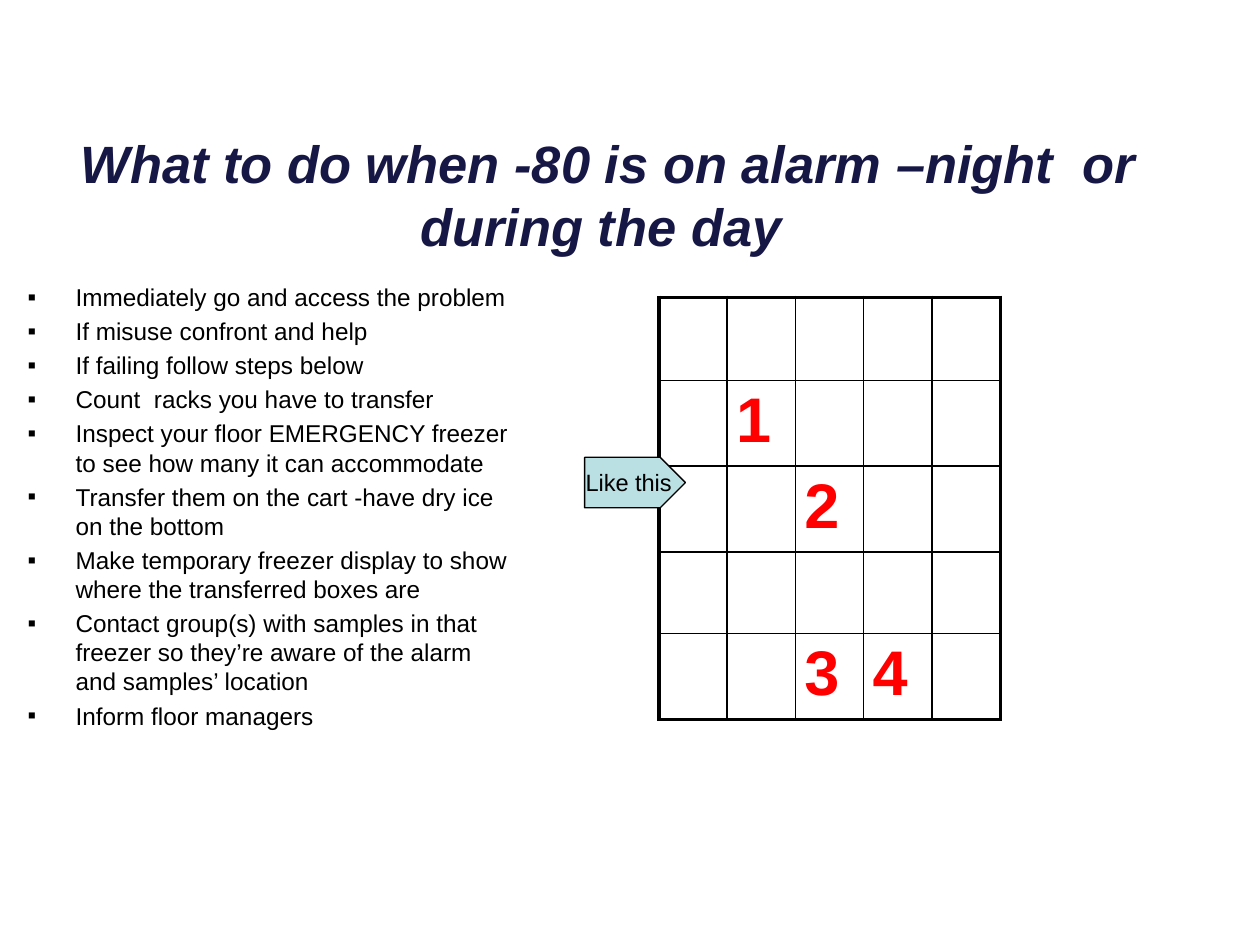
from lxml import etree
from pptx import Presentation
from pptx.dml.color import RGBColor
from pptx.enum.shapes import MSO_SHAPE
from pptx.enum.text import MSO_ANCHOR, MSO_AUTO_SIZE, PP_ALIGN
from pptx.oxml.ns import qn
from pptx.util import Inches, Pt

PENTAGON = MSO_SHAPE.PENTAGON
MIDDLE, TOP = MSO_ANCHOR.MIDDLE, MSO_ANCHOR.TOP
CENTER, LEFT = PP_ALIGN.CENTER, PP_ALIGN.LEFT
NO_AUTOFIT = MSO_AUTO_SIZE.NONE

NAVY = RGBColor(0x17, 0x17, 0x45)
BLACK = RGBColor(0x00, 0x00, 0x00)
RED = RGBColor(0xFF, 0x00, 0x00)
PALE_TEAL = RGBColor(0xBB, 0xE0, 0xE3)

TITLE = "What to do when -80 is on alarm –night  or during the day "
STEPS = [
    "Immediately go and access the problem",
    "If misuse confront and help",
    "If failing follow steps below",
    "Count  racks you have to transfer",
    "Inspect your floor EMERGENCY freezer to see how many it can accommodate",
    "Transfer them on the cart -have dry ice on the bottom",
    "Make temporary freezer display to show where the transferred boxes are",
    "Contact group(s) with samples in that freezer so they’re aware of the alarm "
    "and samples’ location",
    "Inform floor managers",
]
RACKS = {(1, 1): "1", (2, 2): "2", (4, 2): "3", (4, 3): "4"}
ROW_HEIGHTS = [0.66, 0.68, 0.68, 0.65, 0.68]
COLUMN_COUNT = 5
INNER_LINE, OUTER_LINE = Pt(1), Pt(2.25)


def style_text(para, size, color, bold=False, italic=False):
    """Format every run of a paragraph."""
    for span in para.runs:
        font = span.font
        font.name, font.size = "Arial", Pt(size)
        font.bold, font.italic = bold, italic
        font.color.rgb = color


def place(shape, box):
    """Move a shape to a box of left, top, width and height in inches."""
    shape.left, shape.top, shape.width, shape.height = map(Inches, box)


def fill_title(shape, box):
    """Place and format the slide title."""
    place(shape, box)
    frame = shape.text_frame
    frame.text = TITLE
    frame.word_wrap = True
    frame.auto_size = NO_AUTOFIT
    frame.vertical_anchor = MIDDLE
    frame.paragraphs[0].alignment = CENTER
    style_text(frame.paragraphs[0], 30, NAVY, bold=True, italic=True)


def add_bullet(para):
    """Give a paragraph a hanging square bullet."""
    props = para._p.get_or_add_pPr()
    props.set("marL", str(Inches(0.38)))
    props.set("indent", str(Inches(-0.38)))
    etree.SubElement(props, qn("a:buFont")).set("typeface", "Arial")
    etree.SubElement(props, qn("a:buChar")).set("char", "▪")


def fill_steps(shape, box):
    """Place and format the list of steps."""
    place(shape, box)
    frame = shape.text_frame
    frame.text = "\n".join(STEPS)
    frame.word_wrap = True
    frame.auto_size = NO_AUTOFIT
    frame.vertical_anchor = TOP
    for index, para in enumerate(frame.paragraphs):
        add_bullet(para)
        para.alignment = LEFT
        para.space_before = Pt(2.8 if index else 0)
        style_text(para, 13.9, BLACK)


def set_borders(cell, widths):
    """Draw black borders of the given width on each side of a cell."""
    props = cell._tc.get_or_add_tcPr()
    for side, width in widths.items():
        line = etree.SubElement(props, qn(f"a:ln{side}"), w=str(width))
        fill = etree.SubElement(line, qn("a:solidFill"))
        etree.SubElement(fill, qn("a:srgbClr"), val=str(BLACK))


def add_freezer_grid(page, box):
    """Draw the freezer display with its numbered racks."""
    row_count = len(ROW_HEIGHTS)
    table = page.shapes.add_table(row_count, COLUMN_COUNT, *map(Inches, box)).table
    table.first_row = table.horz_banding = False
    for column in table.columns:
        column.width = Inches(box[2] / COLUMN_COUNT)
    for row_index, height in enumerate(ROW_HEIGHTS):
        table.rows[row_index].height = Inches(height)
        for column_index in range(COLUMN_COUNT):
            cell = table.cell(row_index, column_index)
            outer_sides = {
                "L": column_index == 0,
                "R": column_index == COLUMN_COUNT - 1,
                "T": row_index == 0,
                "B": row_index == row_count - 1,
            }
            set_borders(cell, {side: OUTER_LINE if outer else INNER_LINE
                               for side, outer in outer_sides.items()})
            cell.fill.background()
            cell.margin_left = cell.margin_right = Inches(0.07)
            cell.margin_top = cell.margin_bottom = Inches(0.04)
            if (row_index, column_index) in RACKS:
                cell.text_frame.text = RACKS[row_index, column_index]
                style_text(cell.text_frame.paragraphs[0], 36, RED, bold=True)


def add_pointer(page, box):
    """Draw the label that points at the freezer display."""
    pointer = page.shapes.add_shape(PENTAGON, *map(Inches, box))
    pointer.adjustments[0] = 0.5
    pointer.shadow.inherit = False
    pointer.fill.solid()
    pointer.fill.fore_color.rgb = PALE_TEAL
    pointer.line.color.rgb = BLACK
    pointer.line.width = Pt(0.75)
    frame = pointer.text_frame
    frame.text = "Like this"
    frame.word_wrap = False
    frame.vertical_anchor = MIDDLE
    frame.paragraphs[0].alignment = CENTER
    style_text(frame.paragraphs[0], 13.5, BLACK)


def main():
    """Build the freezer alarm slide."""
    deck = Presentation()
    deck.slide_width, deck.slide_height = Inches(10), Inches(7.5)
    page = deck.slides.add_slide(deck.slide_layouts[1])
    fill_title(page.shapes.title, (0.31, 1.12, 9.04, 0.84))
    fill_steps(page.placeholders[1], (0.12, 2.19, 4.06, 4.21))
    add_freezer_grid(page, (5.23, 2.36, 2.71, 3.35))
    add_pointer(page, (4.64, 3.63, 0.8, 0.4))
    deck.save("out.pptx")


if __name__ == "__main__":
    main()
